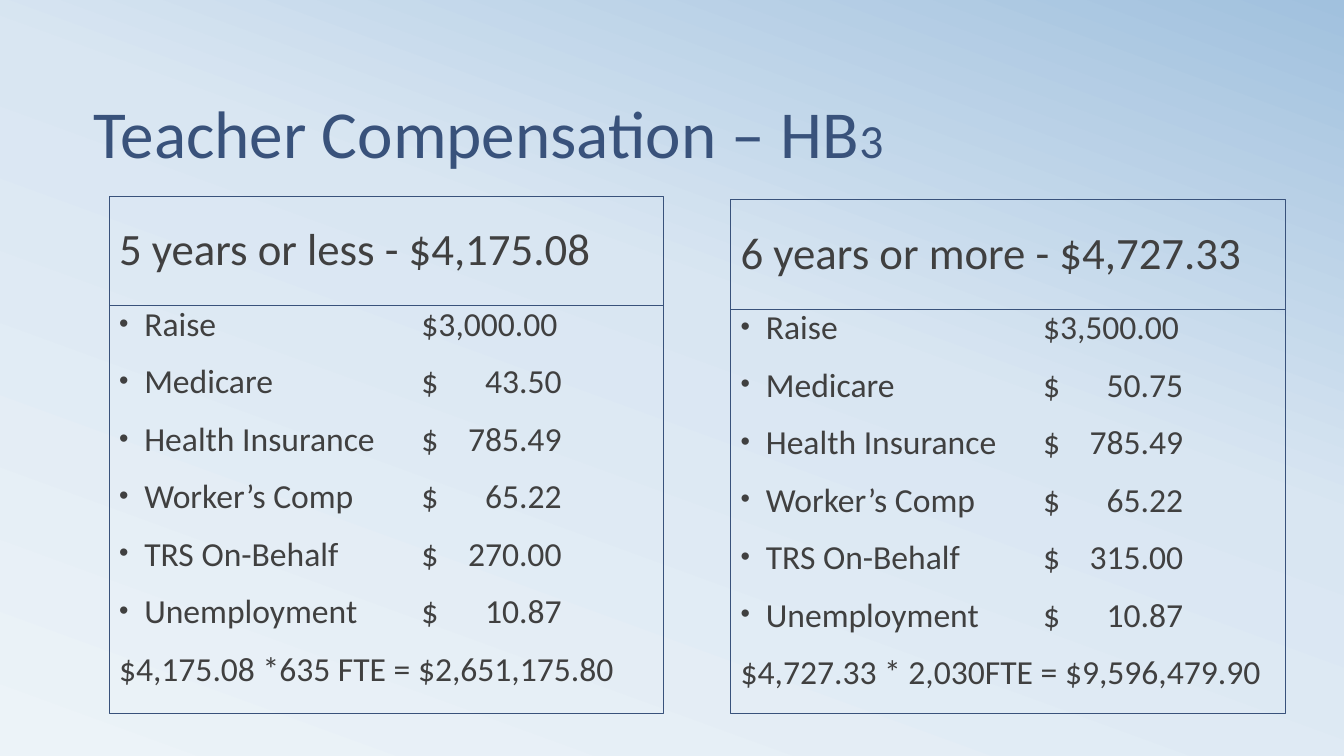
from copy import deepcopy
from dataclasses import dataclass

from lxml.etree import SubElement
from pptx import Presentation
from pptx.dml.color import RGBColor
from pptx.enum.shapes import MSO_SHAPE
from pptx.enum.text import MSO_ANCHOR, PP_ALIGN
from pptx.oxml.ns import qn
from pptx.util import Inches, Pt


@dataclass(frozen=True)
class Theme:
    font: str = "Calibri"
    navy: str = "39527B"
    ink: str = "404040"
    backdrop: tuple = ((0, "ECF3F8"), (0.58, "D9E6F2"), (1, "A1C1DE"))
    backdrop_angle: int = 70
    title_size: int = 48
    digit_size: int = 34
    heading_size: int = 32
    body_size: int = 24
    border: float = 0.75


# The grid has 160 columns and 90 rows, twelve to the inch
COLUMNS, ROWS = 160, 90
CELL = Inches(1 / 12)
INDENT = Inches(0.25)
TAB_STOPS = ((3, "l"), (4.39, "r"))


class SlideBuilder:
    def __init__(self, page, theme):
        self.page = page
        self.theme = theme

    def background(self):
        fill = self.page.background.fill
        fill.gradient()
        fill.gradient_angle = self.theme.backdrop_angle
        stop_list = self.page.element.xpath(".//a:gsLst")[0]
        stop_list.append(deepcopy(stop_list[-1]))
        for stop, (position, color) in zip(fill.gradient_stops, self.theme.backdrop):
            stop.position = position
            stop.color.rgb = RGBColor.from_string(color)

    def style(self, para, size, color, line_spacing):
        para.alignment = PP_ALIGN.LEFT
        para.line_spacing = line_spacing
        for span in para.runs:
            span.font.name = self.theme.font
            span.font.size = Pt(size)
            span.font.color.rgb = RGBColor.from_string(color)

    def title(self, text, digit, column, row, width, height):
        box = self.page.shapes.add_textbox(
            *(round(n * CELL) for n in (column, row, width, height)))
        frame = box.text_frame
        frame.word_wrap = True
        frame.vertical_anchor = MSO_ANCHOR.BOTTOM
        para = frame.paragraphs[0]
        para.text = text
        small = para.add_run()
        small.text = digit
        self.style(para, self.theme.title_size, self.theme.navy, 0.8)
        small.font.size = Pt(self.theme.digit_size)

    def panel(self, column, row, width, height, anchor):
        box = self.page.shapes.add_shape(
            MSO_SHAPE.RECTANGLE,
            *(round(n * CELL) for n in (column, row, width, height)))
        box.shadow.inherit = False
        box.fill.background()
        box.line.color.rgb = RGBColor.from_string(self.theme.navy)
        box.line.width = Pt(self.theme.border)
        box.text_frame.word_wrap = True
        box.text_frame.vertical_anchor = anchor
        return box.text_frame

    def heading(self, text, *place):
        frame = self.panel(*place, MSO_ANCHOR.MIDDLE)
        frame.text = text
        self.style(frame.paragraphs[0], self.theme.heading_size, self.theme.ink, 0.9)

    def cost_list(self, costs, total, *place):
        frame = self.panel(*place, MSO_ANCHOR.TOP)
        frame.text = "\n".join([*costs, total])
        for para in frame.paragraphs:
            self.style(para, self.theme.body_size, self.theme.ink, 0.8)
            para.space_before = Pt(18)
        for para in frame.paragraphs[:-1]:
            self.bullet(para)

    def bullet(self, para):
        props = para._p.get_or_add_pPr()
        props.set("marL", str(INDENT))
        props.set("indent", str(-INDENT))
        color = SubElement(props, qn("a:buClr"))
        SubElement(color, qn("a:srgbClr"), val=self.theme.ink)
        SubElement(props, qn("a:buSzPct"), val="80000")
        SubElement(props, qn("a:buFont"), typeface="Arial")
        SubElement(props, qn("a:buChar"), char="•")
        tabs = SubElement(props, qn("a:tabLst"))
        for inches, side in TAB_STOPS:
            SubElement(tabs, qn("a:tab"), pos=str(Inches(inches)), algn=side)


ITEMS = ("Raise", "Medicare", "Health Insurance", "Worker’s Comp",
         "TRS On-Behalf", "Unemployment")
# Left column, top row, heading, amounts, total
GROUPS = (
    (13, 23.4, "5 years or less - $4,175.08",
     ("$3,000.00", "$\t43.50", "$\t785.49", "$\t65.22", "$\t270.00", "$\t10.87"),
     "$4,175.08 *635 FTE = $2,651,175.80"),
    (87, 23.8, "6 years or more - $4,727.33",
     ("$3,500.00", "$\t50.75", "$\t785.49", "$\t65.22", "$\t315.00", "$\t10.87"),
     "$4,727.33 * 2,030FTE = $9,596,479.90"),
)
PANEL_WIDTH, HEADING_HEIGHT, PANEL_BOTTOM = 66, 13, 85


def main():
    deck = Presentation()
    deck.slide_width, deck.slide_height = COLUMNS * CELL, ROWS * CELL
    page = deck.slides.add_slide(deck.slide_layouts[6])
    builder = SlideBuilder(page, Theme())

    # Backdrop and title
    builder.background()
    builder.title("Teacher Compensation – HB", "3", 10, 7, 144, 14)

    # One heading and cost list for each experience group
    for column, row, heading, amounts, total in GROUPS:
        builder.heading(heading, column, row, PANEL_WIDTH, HEADING_HEIGHT)
        top = row + HEADING_HEIGHT
        costs = [f"{item}\t{amount}" for item, amount in zip(ITEMS, amounts)]
        builder.cost_list(costs, total, column, top, PANEL_WIDTH, PANEL_BOTTOM - top)

    deck.save("out.pptx")


if __name__ == "__main__":
    main()
